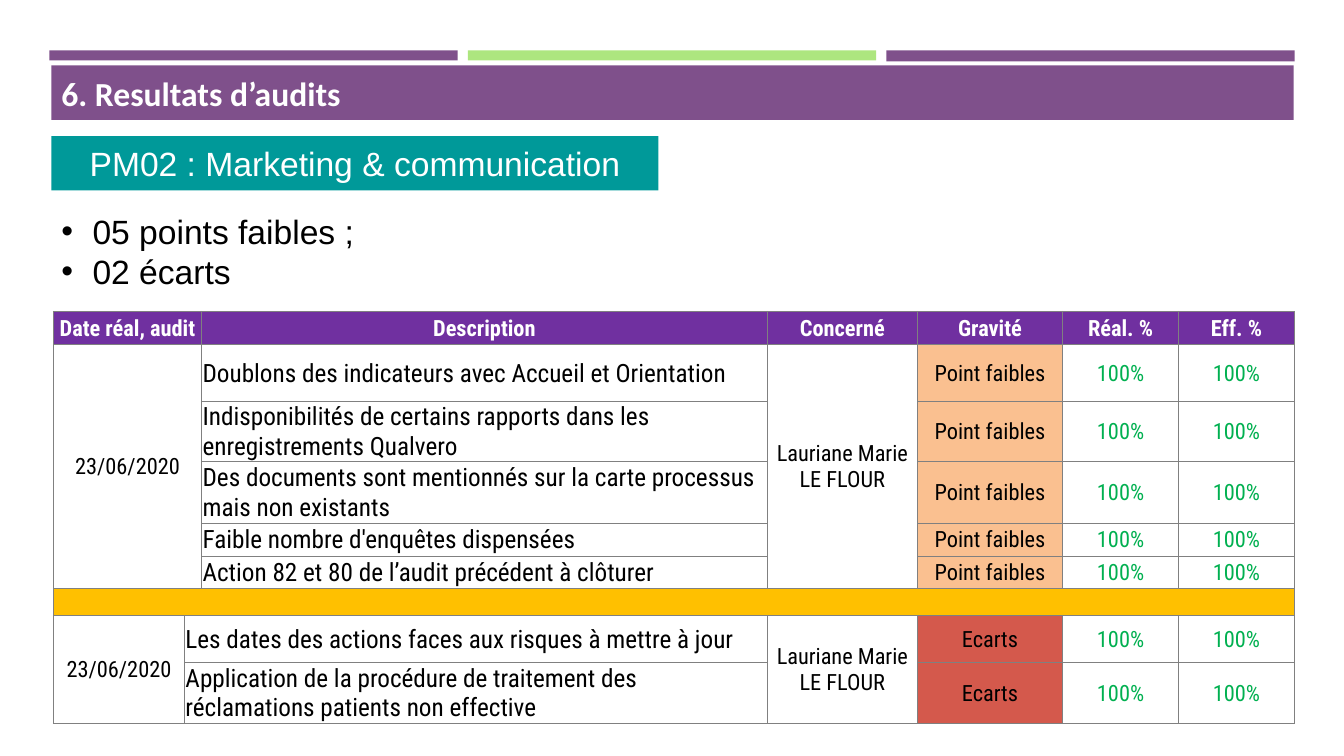
"""Build the audit results slide for the marketing and communication process."""
from dataclasses import dataclass
from typing import Optional

from lxml.etree import SubElement
from pptx import Presentation
from pptx.dml.color import RGBColor
from pptx.enum.shapes import MSO_SHAPE
from pptx.enum.text import MSO_ANCHOR, PP_ALIGN
from pptx.oxml.ns import qn
from pptx.util import Inches, Pt

PURPLE, GREEN, TEAL = "7F508B", "ADE67F", "009999"
HEADER, BORDER, SEPARATOR, DONE = "7030A0", "808080", "FFC000", "00B050"
WHITE, BLACK = "FFFFFF", "000000"
SEVERITY_FILLS = {"Point faibles": "FAC090", "Ecarts": "D4594C"}
TABLE_FONT = "Roboto Condensed"
COLUMN_WIDTHS = [1.3, 0.17, 5.61, 1.49, 1.44, 1.15, 1.15]
ROW_HEIGHTS = [0.33, 0.56, 0.6, 0.61, 0.33, 0.32, 0.27, 0.46, 0.61]
LAST_ROW, LAST_COLUMN = len(ROW_HEIGHTS) - 1, len(COLUMN_WIDTHS) - 1
SEPARATOR_ROW = 6


@dataclass
class Bar:
    left: float
    top: float
    width: float
    height: float
    fill: str
    text: str = ""
    font: str = "Arial"
    bold: bool = False
    align: PP_ALIGN = PP_ALIGN.LEFT


@dataclass
class Audit:
    first_row: int
    date_columns: int
    severity: str
    findings: list[str]
    date: str = "23/06/2020"
    concerned: str = "Lauriane Marie LE FLOUR"


BARS = [
    Bar(0.49, 0.5, 4.05, 0.1, PURPLE),
    Bar(4.64, 0.5, 4.05, 0.1, GREEN),
    Bar(8.79, 0.5, 4.05, 0.11, PURPLE),
    Bar(0.51, 0.65, 12.32, 0.54, PURPLE, "6. Resultats d’audits", "Calibri", True),
    Bar(0.51, 1.35, 6.02, 0.54, TEAL, "PM02 : Marketing & communication", align=PP_ALIGN.CENTER),
]
SUMMARY = ["05 points faibles ;", "02 écarts"]
HEADINGS = {0: "Date réal, audit", 2: "Description", 3: "Concerné",
            4: "Gravité", 5: "Réal. %", 6: "Eff. %"}
AUDITS = [
    Audit(1, 2, "Point faibles", [
        "Doublons des indicateurs avec Accueil et Orientation",
        "Indisponibilités de certains rapports dans les enregistrements Qualvero",
        "Des documents sont mentionnés sur la carte processus mais non existants",
        "Faible nombre d'enquêtes dispensées",
        "Action 82 et 80 de l’audit précédent à clôturer",
    ]),
    Audit(7, 1, "Ecarts", [
        "Les dates des actions faces aux risques à mettre à jour",
        "Application de la procédure de traitement des réclamations patients non effective",
    ]),
]


def rgb(value: str) -> RGBColor:
    return RGBColor.from_string(value)


def write(paragraph, text: str, *, size: float = 16, font: str = TABLE_FONT,
          color: str = BLACK, bold: bool = False, align: PP_ALIGN = PP_ALIGN.CENTER) -> None:
    paragraph.alignment = align
    run = paragraph.add_run()
    run.text = text
    run.font.size, run.font.name, run.font.bold = Pt(size), font, bold
    run.font.color.rgb = rgb(color)


def draw_bar(slide, bar: Bar) -> None:
    shape = slide.shapes.add_shape(MSO_SHAPE.RECTANGLE, Inches(bar.left), Inches(bar.top),
                                   Inches(bar.width), Inches(bar.height))
    shape.shadow.inherit = False
    shape.fill.solid()
    shape.fill.fore_color.rgb = rgb(bar.fill)
    shape.line.fill.background()
    if bar.text:
        shape.text_frame.vertical_anchor = MSO_ANCHOR.MIDDLE
        write(shape.text_frame.paragraphs[0], bar.text, size=24, font=bar.font,
              color=WHITE, bold=bar.bold, align=bar.align)


def draw_summary(slide) -> None:
    box = slide.shapes.add_textbox(Inches(0.51), Inches(2.04), Inches(4.4), Inches(0.91))
    frame = box.text_frame
    frame.word_wrap = True
    for index, point in enumerate(SUMMARY):
        paragraph = frame.add_paragraph() if index else frame.paragraphs[0]
        properties = paragraph._p.get_or_add_pPr()
        properties.set("marL", str(Inches(0.31)))
        properties.set("indent", str(-Inches(0.31)))
        SubElement(properties, qn("a:buFont"), typeface="Arial")
        SubElement(properties, qn("a:buChar"), char="•")
        write(paragraph, point, size=24, font="Arial", align=PP_ALIGN.LEFT)


def format_cell(cell, row: int, column: int) -> None:
    cell.vertical_anchor = MSO_ANCHOR.MIDDLE
    cell.margin_left = cell.margin_right = cell.margin_top = Inches(0.01)
    cell.margin_bottom = 0
    bottom = row + max(cell.span_height, 1) - 1
    right = column + max(cell.span_width, 1) - 1
    outer_edges = {"lnL": column == 0, "lnR": right == LAST_COLUMN,
                   "lnT": row == 0, "lnB": bottom == LAST_ROW}
    properties = cell._tc.get_or_add_tcPr()
    for edge, outer in outer_edges.items():
        line = SubElement(properties, qn(f"a:{edge}"), w=str(Pt(1 if outer else 0.5)))
        SubElement(SubElement(line, qn("a:solidFill")), qn("a:srgbClr"), val=BORDER)
    cell.fill.background()
    SubElement(cell.text_frame.paragraphs[0]._p, qn("a:endParaRPr"), sz="800")


def fill_cell(cell, text: str = "", fill: Optional[str] = None, **text_format) -> None:
    if fill:
        cell.fill.solid()
        cell.fill.fore_color.rgb = rgb(fill)
    if text:
        write(cell.text_frame.paragraphs[0], text, **text_format)


def fill_audit(table, audit: Audit) -> None:
    fill_cell(table.cell(audit.first_row, 0), audit.date)
    fill_cell(table.cell(audit.first_row, 3), audit.concerned)
    for row, finding in enumerate(audit.findings, audit.first_row):
        fill_cell(table.cell(row, audit.date_columns), finding, size=18, align=PP_ALIGN.LEFT)
        fill_cell(table.cell(row, 4), audit.severity, SEVERITY_FILLS[audit.severity])
        for column in (5, 6):
            fill_cell(table.cell(row, column), "100%", color=DONE)


def merge_cells(table) -> None:
    table.cell(0, 0).merge(table.cell(0, 1))
    table.cell(SEPARATOR_ROW, 0).merge(table.cell(SEPARATOR_ROW, LAST_COLUMN))
    for audit in AUDITS:
        last_row = audit.first_row + len(audit.findings) - 1
        table.cell(audit.first_row, 0).merge(table.cell(last_row, audit.date_columns - 1))
        table.cell(audit.first_row, 3).merge(table.cell(last_row, 3))
        if audit.date_columns == 1:
            for row in range(audit.first_row, last_row + 1):
                table.cell(row, 1).merge(table.cell(row, 2))


def draw_audit_table(slide) -> None:
    table = slide.shapes.add_table(
        len(ROW_HEIGHTS), len(COLUMN_WIDTHS), Inches(0.53), Inches(3.09),
        Inches(sum(COLUMN_WIDTHS)), Inches(sum(ROW_HEIGHTS))).table
    table.first_row = table.horz_banding = False
    for column, width in zip(table.columns, COLUMN_WIDTHS):
        column.width = Inches(width)
    for row, height in zip(table.rows, ROW_HEIGHTS):
        row.height = Inches(height)
    merge_cells(table)
    for row in range(len(ROW_HEIGHTS)):
        for column in range(len(COLUMN_WIDTHS)):
            format_cell(table.cell(row, column), row, column)
    for column, heading in HEADINGS.items():
        fill_cell(table.cell(0, column), heading, HEADER, color=WHITE, bold=True)
    fill_cell(table.cell(SEPARATOR_ROW, 0), fill=SEPARATOR)
    for audit in AUDITS:
        fill_audit(table, audit)


def main() -> None:
    presentation = Presentation()
    presentation.slide_width, presentation.slide_height = Inches(13.33), Inches(7.5)
    slide = presentation.slides.add_slide(presentation.slide_layouts[6])
    for bar in BARS:
        draw_bar(slide, bar)
    draw_audit_table(slide)
    draw_summary(slide)
    presentation.save("out.pptx")


if __name__ == "__main__":
    main()
